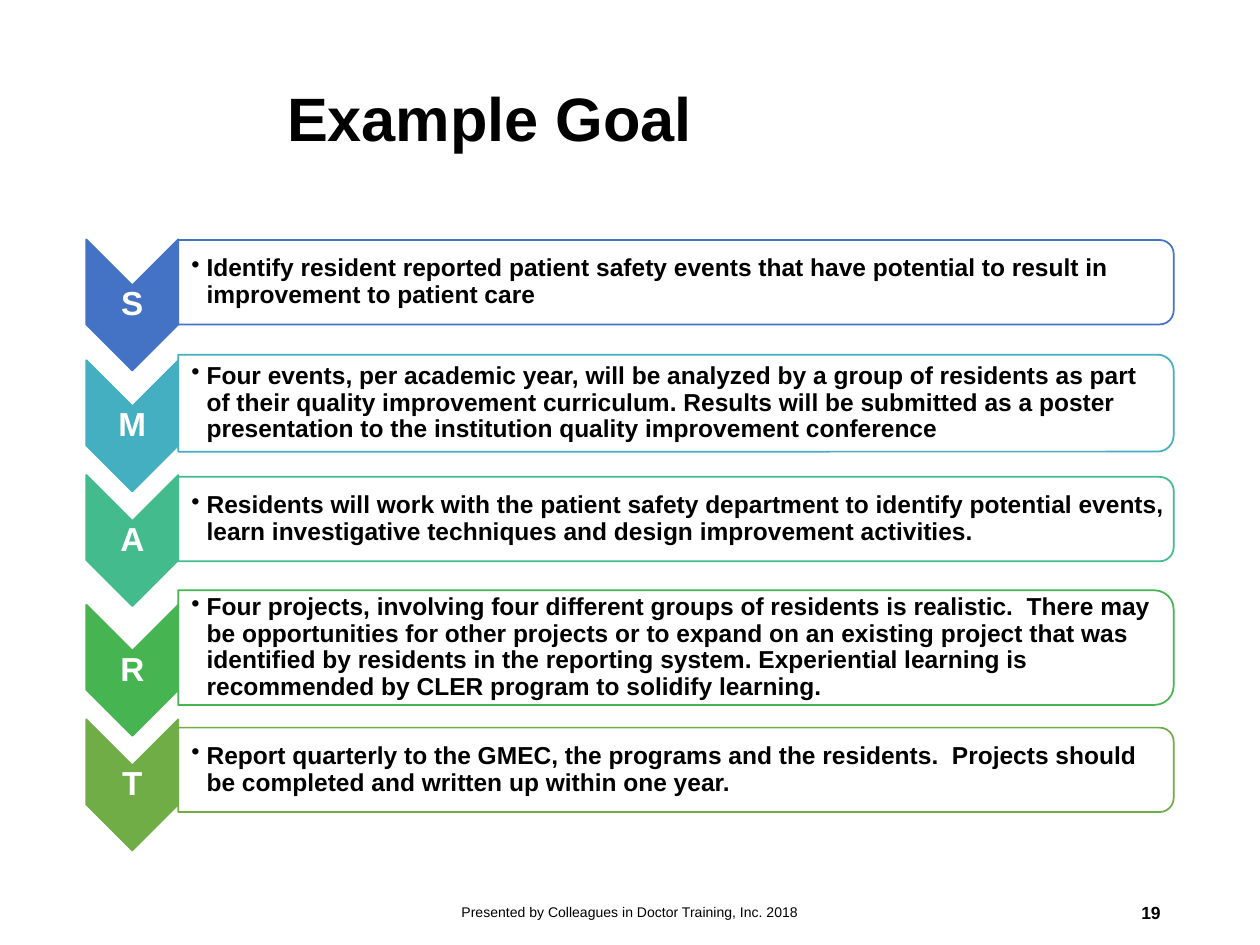
from lxml.etree import SubElement
from pptx import Presentation
from pptx.dml.color import RGBColor
from pptx.enum.shapes import MSO_SHAPE
from pptx.enum.text import MSO_ANCHOR, PP_ALIGN
from pptx.oxml.ns import qn
from pptx.util import Inches, Pt

COLUMN = ROW = Inches(0.1)
CHEVRON_CENTER, CHEVRON_LENGTH, CHEVRON_WIDTH = 10.5, 10.4, 7.3
CARD_CENTER, CARD_WIDTH, CARD_LEFT = 53.65, 79, 14.1
COLORS = {
    "S": "4472C4", "M": "43AFC0", "A": "43BB8D", "R": "45B451", "T": "70AD47",
    "black": "000000", "white": "FFFFFF",
}
# letter, chevron middle row, card middle row, card rows, text columns, statement
GOALS = [
    ("S", 24.2, 22.4, 6.7, 78.7,
     "Identify resident reported patient safety events that have potential "
     "to result in improvement to patient care"),
    ("M", 33.8, 32, 7.7, 78.6,
     "Four events, per academic year, will be analyzed by a group of residents "
     "as part of their quality improvement curriculum. Results will be submitted "
     "as a poster presentation to the institution quality improvement conference"),
    ("A", 42.9, 41.2, 6.7, 78.7,
     "Residents will work with the patient safety department to identify potential "
     "events, learn investigative techniques and design improvement activities."),
    ("R", 53.2, 51.4, 9.1, 78.5,
     "Four projects, involving four different groups of residents is realistic.  "
     "There may be opportunities for other projects or to expand on an existing "
     "project that was identified by residents in the reporting system. "
     "Experiential learning is recommended by CLER program to solidify learning."),
    ("T", 62.3, 61.1, 6.7, 78.7,
     "Report quarterly to the GMEC, the programs and the residents.  Projects "
     "should be completed and written up within one year."),
]


def grid(column, row, columns, rows):
    """Turn grid units into left, top, width and height."""
    return (round(column * COLUMN), round(row * ROW),
            round(columns * COLUMN), round(rows * ROW))


def color(name):
    """Look up a named colour."""
    return RGBColor.from_string(COLORS[name])


def add_turned_shape(page, preset, center, size, fill, line):
    """Add a preset shape turned a quarter around its centre."""
    (column, row), (columns, rows) = center, size
    place = grid(column - columns / 2, row - rows / 2, columns, rows)
    shape = page.shapes.add_shape(preset, *place)
    shape.rotation = 90
    shape.shadow.inherit = False
    shape.fill.solid()
    shape.fill.fore_color.rgb = color(fill)
    shape.line.color.rgb = color(line)
    shape.line.width = Pt(1)


def add_bullet(para):
    """Give a paragraph a hanging bullet."""
    properties = para._p.get_or_add_pPr()
    properties.set("marL", str(Inches(0.12)))
    properties.set("indent", str(-Inches(0.12)))
    SubElement(properties, qn("a:buChar")).set("char", "•")


def add_text(page, place, text, *, size, bold=False, ink="black",
             align=PP_ALIGN.LEFT, spacing=1.0, insets=(0.1, 0.05), bullet=False):
    """Add a wrapped, vertically centred text box."""
    box = page.shapes.add_textbox(*place)
    frame = box.text_frame
    frame.word_wrap = True
    frame.vertical_anchor = MSO_ANCHOR.MIDDLE
    frame.margin_left, frame.margin_top = map(Inches, insets)
    frame.margin_right = Inches(min(insets[0], 0.1) if not bullet else insets[1])
    frame.margin_bottom = Inches(insets[1])
    para = frame.paragraphs[0]
    para.alignment = align
    para.line_spacing = spacing
    if bullet:
        add_bullet(para)
    span = para.add_run()
    span.text = text
    span.font.name = "Arial"
    span.font.size = Pt(size)
    span.font.bold = bold
    span.font.color.rgb = color(ink)


def add_goal(page, letter, chevron_row, card_row, rows, columns, statement):
    """Add one lettered chevron with its statement card."""
    add_turned_shape(page, MSO_SHAPE.CHEVRON, (CHEVRON_CENTER, chevron_row),
                     (CHEVRON_LENGTH, CHEVRON_WIDTH), letter, letter)
    add_text(page, grid(CHEVRON_CENTER - CHEVRON_WIDTH / 2, chevron_row - 1.55,
                        CHEVRON_WIDTH, 3.1),
             letter, size=19, bold=True, ink="white", align=PP_ALIGN.CENTER,
             spacing=0.9, insets=(0.01, 0.01))
    add_turned_shape(page, MSO_SHAPE.ROUND_2_SAME_RECTANGLE, (CARD_CENTER, card_row),
                     (rows, CARD_WIDTH), "white", letter)
    text_rows = rows * 0.9
    add_text(page, grid(CARD_LEFT, card_row - text_rows / 2, columns, text_rows),
             statement, size=14, bold=True, spacing=0.9, insets=(0.11, 0.01),
             bullet=True)


def main():
    """Build the slide and save the deck."""
    deck = Presentation()
    deck.slide_width, deck.slide_height = 100 * COLUMN, 75 * ROW
    page = deck.slides.add_slide(deck.slide_layouts[6])
    for goal in GOALS:
        add_goal(page, *goal)
    add_text(page, grid(21.8, 2.4, 71.4, 14.5), "Example Goal",
             size=35, bold=True, spacing=0.9)
    add_text(page, grid(33.1, 70.4, 33.8, 4),
             "Presented by Colleagues in Doctor Training, Inc. 2018",
             size=8, align=PP_ALIGN.CENTER)
    add_text(page, grid(70.6, 70.4, 22.5, 4), "19",
             size=10, bold=True, align=PP_ALIGN.RIGHT)
    deck.save("out.pptx")


if __name__ == "__main__":
    main()
